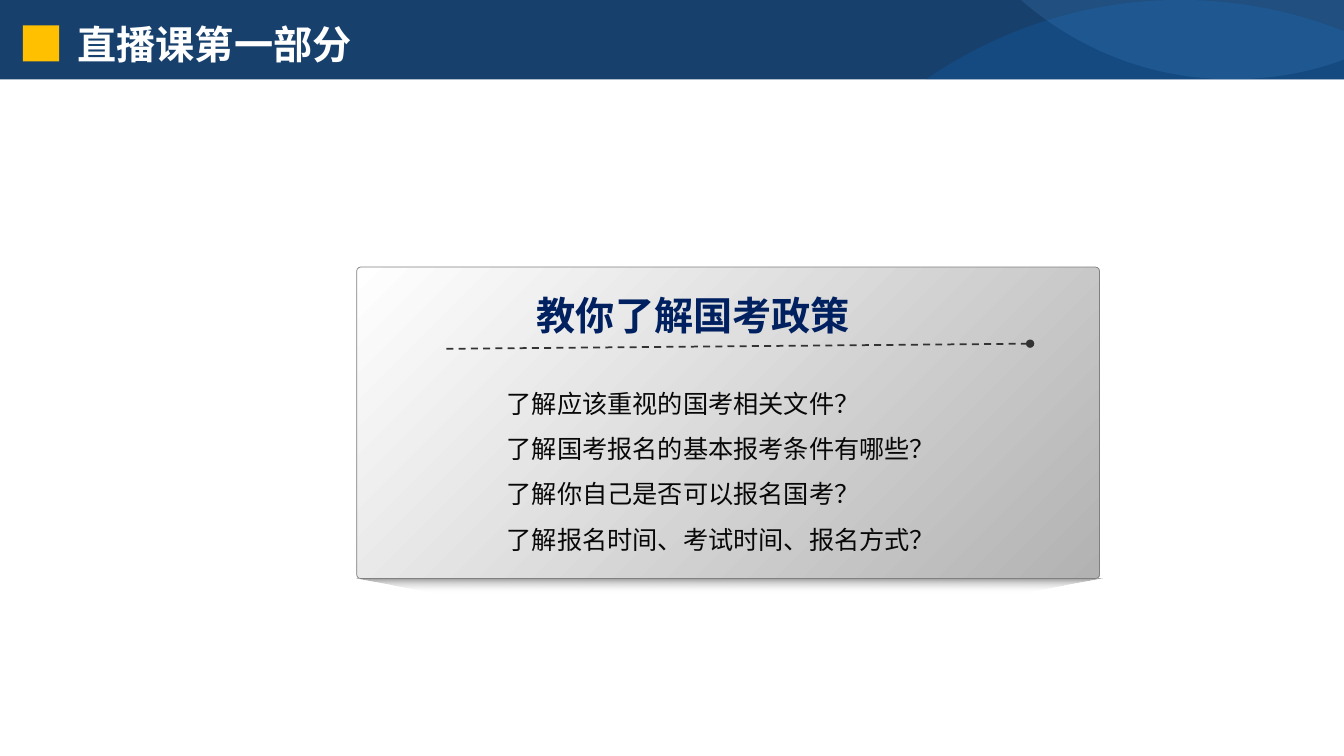
from dataclasses import dataclass
from typing import Union

from lxml.etree import SubElement
from pptx import Presentation
from pptx.dml.color import RGBColor
from pptx.enum.dml import MSO_LINE
from pptx.enum.shapes import MSO_CONNECTOR, MSO_SHAPE
from pptx.enum.text import MSO_ANCHOR, MSO_AUTO_SIZE, PP_ALIGN
from pptx.oxml.ns import qn
from pptx.util import Cm, Pt

FONT = "Noto Sans CJK SC"
PAGE_WIDTH, PAGE_HEIGHT, BAND_HEIGHT = 33.87, 19.05, 2.0
CURVE_STEPS = 24
Point = tuple[float, float]


@dataclass
class Box:
    """A rectangle in centimetres."""
    left: float
    top: float
    width: float
    height: float

    def lengths(self) -> tuple:
        """Return the four measures as lengths."""
        return Cm(self.left), Cm(self.top), Cm(self.width), Cm(self.height)


@dataclass
class Paint:
    """One colour, or two for a gradient, with opacities in percent."""
    colours: tuple[str, ...]
    opacities: tuple[int, ...] = ()
    angle: int = 0


@dataclass
class Block:
    """A preset shape with its paint."""
    preset: MSO_SHAPE
    box: Box
    paint: Paint


@dataclass
class Curve:
    """A cubic curve from the preceding point."""
    first: Point
    second: Point
    end: Point


@dataclass
class Outline:
    """A free outline with its paint."""
    start: Point
    segments: list[Union[Point, Curve]]
    paint: Paint


@dataclass
class Text:
    """A group of lines sharing one style."""
    box: Box
    lines: list[str]
    size: int
    colour: str
    bold: bool = False
    spacing: float = 1.0


BAND = Block(MSO_SHAPE.RECTANGLE, Box(0, 0, PAGE_WIDTH, BAND_HEIGHT), Paint(("17406D",)))
MARKER = Block(MSO_SHAPE.RECTANGLE, Box(0.58, 0.64, 0.91, 0.91), Paint(("FFC000",)))
CARD = Block(MSO_SHAPE.ROUNDED_RECTANGLE, Box(8.99, 6.73, 18.72, 7.85),
             Paint(("FFFFFF", "B2B2B2"), angle=45))
OUTLINES = [
    Outline((29.74, 0),
            [Curve((31.19, 0), (32.59, 0.28), (PAGE_WIDTH, 0.79)),
             (PAGE_WIDTH, BAND_HEIGHT), (23.34, BAND_HEIGHT),
             Curve((25.17, 0.74), (27.38, 0), (29.74, 0))],
            Paint(("0F6FC6",), (23,))),
    Outline((PAGE_WIDTH, 0),
            [(PAGE_WIDTH, 1.5),
             Curve((32.99, 1.83), (32.03, BAND_HEIGHT), (31.04, BAND_HEIGHT)),
             Curve((29.01, BAND_HEIGHT), (27.15, 1.24), (25.73, 0))],
            Paint(("59AAF2",), (15,))),
    Outline((8.99, 14.58), [(10.97, 14.94), (25.81, 14.94), (27.79, 14.58)],
            Paint(("333333", "FFFFFF"), (50, 0), 90)),
]
TITLE = Text(Box(1.7, 0.38, 26.49, 1.45), ["直播课第一部分"], 28, "FFFFFF", True)
CARD_TEXTS = [
    Text(Box(13.28, 7.21, 8.71, 1.45), ["教你了解国考政策"], 28, "002060", True),
    Text(Box(12.52, 9.27, 11.86, 4.75),
         ["了解应该重视的国考相关文件？", "了解国考报名的基本报考条件有哪些？",
          "了解你自己是否可以报名国考？", "了解报名时间、考试时间、报名方式？"],
         18, "080808", spacing=1.5),
]


def colour(value: str) -> RGBColor:
    """Turn a hex string into a colour."""
    return RGBColor.from_string(value)


def apply_paint(shape, paint: Paint) -> None:
    """Fill a shape and clear its line and shadow."""
    shape.shadow.inherit = False
    if len(paint.colours) == 1:
        shape.fill.solid()
        shape.fill.fore_color.rgb = colour(paint.colours[0])
    else:
        shape.fill.gradient()
        shape.fill.gradient_angle = (360 - paint.angle) % 360
        for stop, value in zip(shape.fill.gradient_stops, paint.colours):
            stop.color.rgb = colour(value)
    tones = shape.element.spPr.findall(".//" + qn("a:srgbClr"))
    for tone, opacity in zip(tones, paint.opacities):
        SubElement(tone, qn("a:alpha"), val=str(opacity * 1000))
    shape.line.fill.background()


def add_block(page, block: Block):
    """Draw a preset shape."""
    shape = page.shapes.add_shape(block.preset, *block.box.lengths())
    apply_paint(shape, block.paint)
    return shape


def curve_points(start: Point, curve: Curve) -> list[Point]:
    """Sample a cubic curve."""
    points = []
    corners = (start, curve.first, curve.second, curve.end)
    for step in range(1, CURVE_STEPS + 1):
        t = step / CURVE_STEPS
        weights = ((1 - t) ** 3, 3 * t * (1 - t) ** 2, 3 * t ** 2 * (1 - t), t ** 3)
        points.append((sum(w * x for w, (x, _) in zip(weights, corners)),
                       sum(w * y for w, (_, y) in zip(weights, corners))))
    return points


def add_outline(page, outline: Outline) -> None:
    """Draw a closed free outline."""
    points = [outline.start]
    for segment in outline.segments:
        points += curve_points(points[-1], segment) if isinstance(segment, Curve) else [segment]
    vertices = [(Cm(x), Cm(y)) for x, y in points]
    builder = page.shapes.build_freeform(*vertices[0])
    builder.add_line_segments(vertices[1:], close=True)
    apply_paint(builder.convert_to_shape(), outline.paint)


def write_text(shape, text: Text) -> None:
    """Place a text shape and format its runs."""
    shape.left, shape.top, shape.width, shape.height = text.box.lengths()
    frame = shape.text_frame
    frame.text = "\n".join(text.lines)
    frame.word_wrap = True
    frame.auto_size = MSO_AUTO_SIZE.SHAPE_TO_FIT_TEXT
    frame.vertical_anchor = MSO_ANCHOR.TOP
    for para in frame.paragraphs:
        para.alignment = PP_ALIGN.LEFT
        para.line_spacing = text.spacing
        for span in para.runs:
            span.font.size = Pt(text.size)
            span.font.bold = text.bold
            span.font.name = FONT
            span.font.color.rgb = colour(text.colour)
    for properties in shape.element.findall(".//" + qn("a:rPr")):
        SubElement(properties, qn("a:ea"), typeface=FONT)


def add_divider(page, start: Point, end: Point) -> None:
    """Draw the dashed rule with a round end."""
    rule = page.shapes.add_connector(MSO_CONNECTOR.STRAIGHT, *map(Cm, start + end))
    rule.line.color.rgb = colour("333333")
    rule.line.width = Pt(1.25)
    rule.line.dash_style = MSO_LINE.DASH
    properties = rule.element.spPr
    SubElement(properties.find(qn("a:ln")), qn("a:tailEnd"), type="oval")
    SubElement(properties, qn("a:effectLst"))


def main() -> None:
    """Build and save the slide."""
    deck = Presentation()
    deck.slide_width, deck.slide_height = Cm(PAGE_WIDTH), Cm(PAGE_HEIGHT)
    page = deck.slides.add_slide(deck.slide_layouts[5])
    add_block(page, BAND)
    for outline in OUTLINES:
        add_outline(page, outline)
    card = add_block(page, CARD)
    card.adjustments[0] = 0.013
    card.line.color.rgb = colour("808080")
    card.line.width = Pt(0.5)
    add_divider(page, (11.25, 8.79), (25.96, 8.66))
    for text in CARD_TEXTS:
        write_text(page.shapes.add_textbox(*text.box.lengths()), text)
    title = page.shapes.title
    write_text(title, TITLE)
    title.element.getparent().append(title.element)
    add_block(page, MARKER)
    deck.save("out.pptx")


if __name__ == "__main__":
    main()
